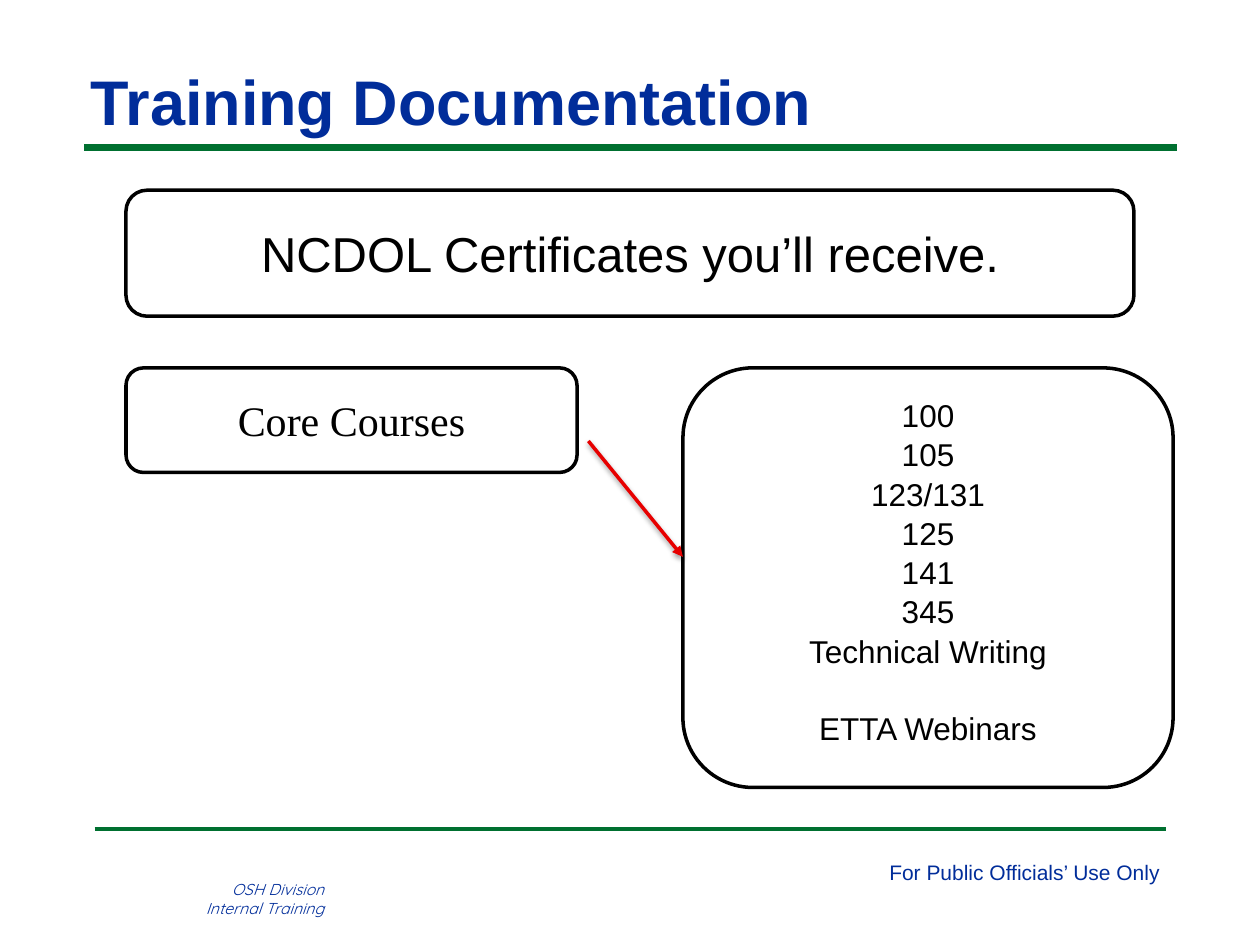
import pptx
import pptx.util
import pptx.dml.color
import pptx.oxml
import pptx.oxml.ns
from dataclasses import dataclass
from pptx.enum.shapes import MSO_CONNECTOR, MSO_SHAPE
from pptx.enum.text import MSO_ANCHOR, PP_ALIGN

Inches, Pt = pptx.util.Inches, pptx.util.Pt


@dataclass(frozen=True)
class Theme:
    green: str = "007030"
    blue: str = "012D9A"
    black: str = "000000"
    white: str = "FFFFFF"
    red: str = "E70000"
    sans: str = "Arial"
    serif: str = "Times New Roman"
    light: str = "Quicksand"
    title: int = 36
    banner: int = 28
    label: int = 24
    body: int = 18
    footer: int = 12
    small: int = 9
    thick: int = 4
    thin: int = 2


T = Theme()
ARROW = '<a:tailEnd %s type="triangle"/>' % pptx.oxml.ns.nsdecls("a")
NO_EFFECT = "<a:effectLst %s/>" % pptx.oxml.ns.nsdecls("a")
SOFT_SHADOW = (
    '<a:effectLst %s><a:outerShdw blurRad="40000" dist="20000" dir="5400000" rotWithShape="0">'
    '<a:srgbClr val="000000"><a:alpha val="38000"/></a:srgbClr>'
    "</a:outerShdw></a:effectLst>" % pptx.oxml.ns.nsdecls("a"))


def rgb(color):
    return pptx.dml.color.RGBColor.from_string(color)


def write(tf, lines, size, font, color, align=PP_ALIGN.LEFT, bold=False, italic=False):
    for i, line in enumerate(lines):
        p = tf.paragraphs[0] if i == 0 else tf.add_paragraph()
        p.text = line
        p.alignment = align
        p.font.size, p.font.name = Pt(size), font
        p.font.bold, p.font.italic = bold, italic
        p.font.color.rgb = rgb(color)


def add_text(s, box, lines, size, font, wrap=True, **style):
    tf = s.shapes.add_textbox(*map(Inches, box)).text_frame
    tf.word_wrap = wrap
    write(tf, lines, size, font, T.blue, **style)
    return tf


def add_line(s, start, end, color, width, effect=NO_EFFECT, arrow=False):
    points = map(Inches, (*start, *end))
    sp = s.shapes.add_connector(MSO_CONNECTOR.STRAIGHT, *points)
    sp.line.color.rgb = rgb(color)
    sp.line.width = Pt(width)
    if arrow:
        sp.line._get_or_add_ln().append(pptx.oxml.parse_xml(ARROW))
    sp._element.spPr.append(pptx.oxml.parse_xml(effect))


def add_panel(s, box, lines, size, font, anchor=MSO_ANCHOR.MIDDLE):
    sp = s.shapes.add_shape(MSO_SHAPE.ROUNDED_RECTANGLE, *map(Inches, box))
    sp.shadow.inherit = False
    sp.fill.solid()
    sp.fill.fore_color.rgb = rgb(T.white)
    sp.line.color.rgb = rgb(T.black)
    sp.line.width = Pt(T.thin)
    tf = sp.text_frame
    tf.word_wrap = True
    tf.vertical_anchor = anchor
    write(tf, lines, size, font, T.black, align=PP_ALIGN.CENTER)
    return tf


def header(s, x, y, w, h):
    add_line(s, (x, y + 0.67), (x + w, y + 0.67), T.green, T.thick)
    tf = add_text(s, (x, y, w, h), ["Training Documentation"], T.title, T.sans, bold=True)
    tf.margin_left = tf.margin_right = Inches(0.05)
    tf.margin_top = tf.margin_bottom = 0


def footer(s, x, y, w):
    add_line(s, (x, y), (x + w, y), T.green, T.thin)
    add_text(s, (6.96, y + 0.19, 2.37, 0.3), ["For Public Officials’ Use Only"],
             T.footer, T.sans, wrap=False)
    add_text(s, (1.17, y + 0.35, 1.5, 0.4), ["OSH Division", "Internal Training"],
             T.small, T.light, align=PP_ALIGN.RIGHT, italic=True)


def courses(s, x, y, w, h):
    # Label on the left, course list on the right, arrow between them
    label_w, list_w = 3.58, 3.89
    list_x = x + w - list_w
    add_panel(s, (x, y, label_w, 0.83), ["Core Courses"], T.label, T.serif)
    tf = add_panel(s, (list_x, y, list_w, h),
                   ["100", "105", "123/131", "125", "141", "345",
                    "Technical Writing", "ETTA Webinars"],
                   T.body, T.sans, MSO_ANCHOR.TOP)
    for p in tf.paragraphs:
        p.line_spacing = 1.04
    tf.paragraphs[-1].space_before = Pt(21.6)
    add_line(s, (x + label_w + 0.09, y + 0.58), (list_x, y + 1.5), T.red, T.thin,
             SOFT_SHADOW, arrow=True)


def main():
    prs = pptx.Presentation()
    prs.slide_width, prs.slide_height = Inches(10), Inches(7.5)
    s = prs.slides.add_slide(prs.slide_layouts[6])
    header(s, 0.67, 0.5, 8.67, 0.6)
    footer(s, 0.75, 6.58, 8.5)
    add_panel(s, (1, 1.51, 8, 1), ["NCDOL Certificates you’ll receive."], T.banner, T.sans)
    courses(s, 1, 2.92, 8.31, 3.33)
    prs.save("out.pptx")


if __name__ == "__main__":
    main()
